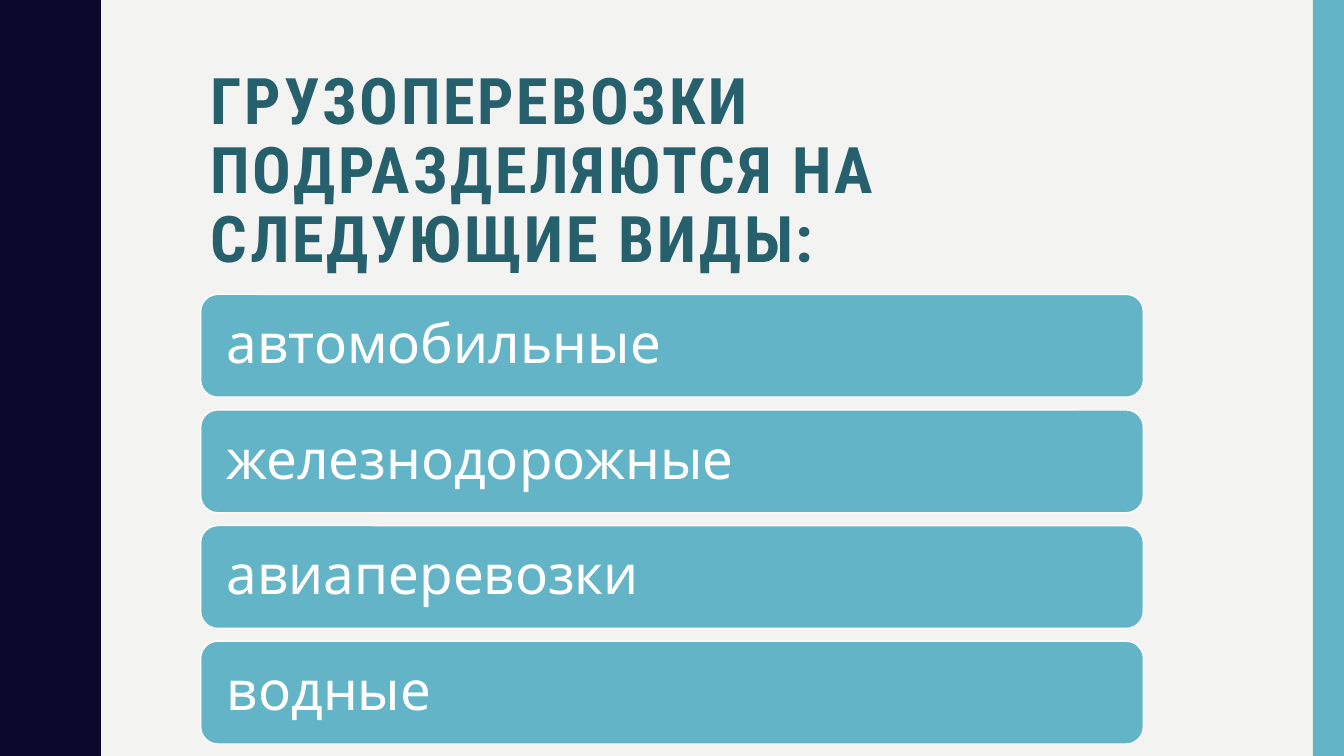
from dataclasses import dataclass

from pptx import Presentation
from pptx.dml.color import RGBColor
from pptx.enum.shapes import MSO_SHAPE
from pptx.enum.text import MSO_ANCHOR, MSO_AUTO_SIZE, PP_ALIGN
from pptx.util import Inches, Pt

RECTANGLE = MSO_SHAPE.RECTANGLE
ROUNDED_RECTANGLE = MSO_SHAPE.ROUNDED_RECTANGLE
TOP = MSO_ANCHOR.TOP
MIDDLE = MSO_ANCHOR.MIDDLE
LEFT = PP_ALIGN.LEFT
NO_AUTOFIT = MSO_AUTO_SIZE.NONE


@dataclass(frozen=True)
class Theme:
    background: RGBColor = RGBColor.from_string("F3F3F2")
    wave: RGBColor = RGBColor.from_string("0B082E")
    accent: RGBColor = RGBColor.from_string("62B4C6")
    title: RGBColor = RGBColor.from_string("27606D")
    white: RGBColor = RGBColor.from_string("FFFFFF")
    title_font: str = "Roboto Condensed"
    body_font: str = "Cabin"
    title_size: float = 45.9
    body_size: float = 39
    line_spacing: float = 0.9


THEME = Theme()
SLIDE_WIDTH, SLIDE_HEIGHT = 13.33, 7.5
CONTENT_LEFT, CONTENT_WIDTH = 1.99, 9.35
TITLE_TOP, TITLE_HEIGHT = 0.63, 1.45
BAR_TOP, BAR_HEIGHT, BAR_PITCH = 2.92, 1.02, 1.147
BAR_INSET = 0.21
STRIPE_WIDTH = 0.31
WAVE_PERIOD = 1.5
WAVE_COUNT = 5
WAVE_RISE = [
    (0.78, 0), (0.78, 0.07), (0.79, 0.14), (0.8, 0.2), (0.81, 0.25),
    (0.83, 0.29), (0.85, 0.33), (0.87, 0.38), (0.89, 0.42), (0.91, 0.46),
    (0.93, 0.5), (0.95, 0.55), (0.96, 0.61), (0.97, 0.68), (0.97, 0.75),
]
TITLE = "ГРУЗОПЕРЕВОЗКИ ПОДРАЗДЕЛЯЮТСЯ НА СЛЕДУЮЩИЕ ВИДЫ:"
TRANSPORT_KINDS = ["автомобильные", "железнодорожные", "авиаперевозки", "водные"]


def paint(shape, fill, line=None):
    shape.shadow.inherit = False
    shape.fill.solid()
    shape.fill.fore_color.rgb = fill
    if line is None:
        shape.line.fill.background()
    else:
        shape.line.color.rgb = line
        shape.line.width = Pt(1)


def write_text(shape, text, font_name, size, color, bold=False):
    paragraph = shape.text_frame.paragraphs[0]
    paragraph.alignment = LEFT
    paragraph.line_spacing = THEME.line_spacing
    run = paragraph.add_run()
    run.text = text
    run.font.name = font_name
    run.font.size = Pt(size)
    run.font.color.rgb = color
    run.font.bold = bold
    return run


def add_wave(slide):
    fall = [(x, WAVE_PERIOD - y) for x, y in reversed(WAVE_RISE[:-1])]
    edge = [
        (x, y + index * WAVE_PERIOD)
        for index in range(WAVE_COUNT)
        for x, y in WAVE_RISE + fall
    ]
    builder = slide.shapes.build_freeform(0, 0, scale=Inches(1))
    builder.add_line_segments(edge + [(0, SLIDE_HEIGHT)], close=True)
    paint(builder.convert_to_shape(), THEME.wave)


def add_stripe(slide):
    stripe = slide.shapes.add_shape(
        RECTANGLE, Inches(SLIDE_WIDTH - STRIPE_WIDTH), 0,
        Inches(STRIPE_WIDTH), Inches(SLIDE_HEIGHT),
    )
    paint(stripe, THEME.accent)


def format_title(slide):
    title = slide.shapes.title
    title.left, title.top = Inches(CONTENT_LEFT), Inches(TITLE_TOP)
    title.width, title.height = Inches(CONTENT_WIDTH), Inches(TITLE_HEIGHT)
    frame = title.text_frame
    frame.word_wrap = True
    frame.auto_size = NO_AUTOFIT
    frame.vertical_anchor = TOP
    run = write_text(
        title, TITLE, THEME.title_font, THEME.title_size, THEME.title, bold=True
    )
    run.font._element.set("spc", "200")


def add_bar(slide, top, text):
    bar = slide.shapes.add_shape(
        ROUNDED_RECTANGLE, Inches(CONTENT_LEFT), Inches(top),
        Inches(CONTENT_WIDTH), Inches(BAR_HEIGHT),
    )
    paint(bar, THEME.accent, THEME.white)
    frame = bar.text_frame
    frame.word_wrap = True
    frame.vertical_anchor = MIDDLE
    frame.margin_left = frame.margin_right = Inches(BAR_INSET)
    frame.margin_top = frame.margin_bottom = Inches(BAR_INSET)
    write_text(bar, text, THEME.body_font, THEME.body_size, THEME.white)


def main():
    presentation = Presentation()
    presentation.slide_width = Inches(SLIDE_WIDTH)
    presentation.slide_height = Inches(SLIDE_HEIGHT)
    slide = presentation.slides.add_slide(
        presentation.slide_layouts.get_by_name("Title Only")
    )
    slide.background.fill.solid()
    slide.background.fill.fore_color.rgb = THEME.background
    add_wave(slide)
    add_stripe(slide)
    format_title(slide)
    for index, kind in enumerate(TRANSPORT_KINDS):
        add_bar(slide, BAR_TOP + index * BAR_PITCH, kind)
    presentation.save("out.pptx")


if __name__ == "__main__":
    main()
